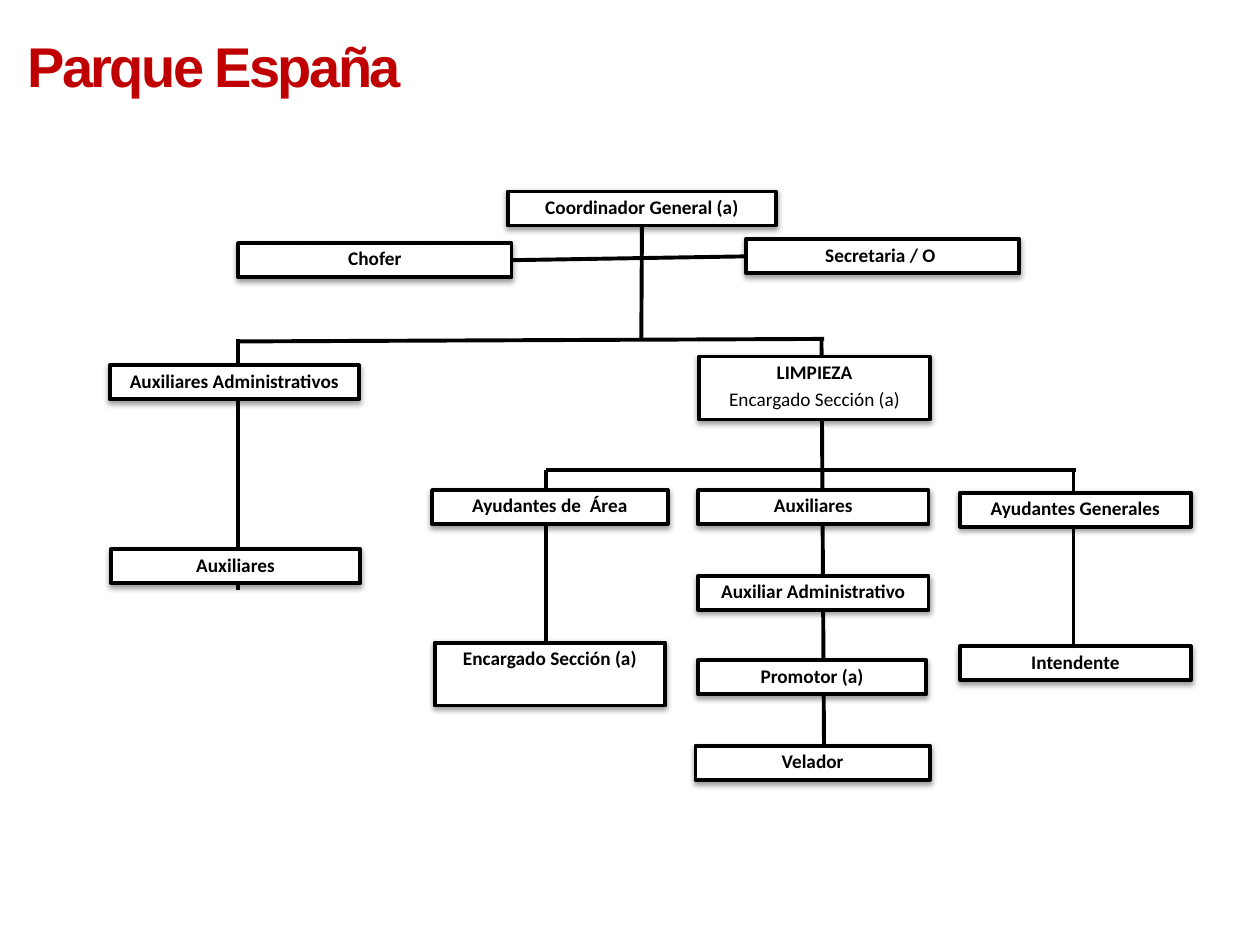
"""Build the organisation chart of Parque España."""
from lxml import etree
from pptx import Presentation
from pptx import util as u
from pptx.dml.color import RGBColor
from pptx.enum import shapes, text
from pptx.oxml import ns

RED = RGBColor(0xC0, 0x00, 0x00)
BLACK = RGBColor(0x00, 0x00, 0x00)
WHITE = RGBColor(0xFF, 0xFF, 0xFF)

LOW, TALL = 0.27, 0.5
TITLE = "Parque España"
BOXES = [
    ("area", 3.43, 3.89, 1.87, LOW, ["Ayudantes de  Área"]),
    ("secretary", 5.92, 1.9, 2.17, LOW, ["Secretaria / O "]),
    ("admin", 5.54, 4.57, 1.83, LOW, ["Auxiliar Administrativo"]),
    ("helpers", 5.54, 3.89, 1.83, LOW, ["Auxiliares"]),
    ("cleaning", 5.55, 2.83, 1.83, TALL, ["LIMPIEZA", "Encargado Sección (a)"]),
    ("steward", 7.62, 5.13, 1.83, LOW, ["Intendente"]),
    ("promoter", 5.54, 5.24, 1.81, LOW, ["Promotor (a)"]),
    ("driver", 1.89, 1.93, 2.17, LOW, ["Chofer"]),
    ("aides", 0.88, 4.36, 1.98, LOW, ["Auxiliares"]),
    ("office", 0.87, 2.9, 1.98, LOW, ["Auxiliares Administrativos"]),
    ("general", 7.62, 3.91, 1.83, LOW, ["Ayudantes Generales"]),
    ("head", 4.03, 1.52, 2.13, LOW, ["Coordinador General (a)"]),
    ("section", 3.45, 5.1, 1.83, TALL, ["Encargado Sección (a)"]),
    ("guard", 5.52, 5.92, 1.86, LOW, ["Velador"]),
]
LINES = [
    (8.52, 5.29, 8.52, 3.72),
    (4.33, 5.4, 4.33, 3.73),
    (6.54, 5.92, 6.52, 2.69),
    (1.89, 2.71, 6.54, 2.69),
    (1.89, 4.68, 1.89, 2.69),
    (4.33, 3.73, 8.54, 3.73),
]


def effects(shape):
    return etree.SubElement(shape._element.spPr, ns.qn("a:effectLst"))


def shade(shape):
    drop = etree.SubElement(effects(shape), ns.qn("a:outerShdw"), blurRad="40000",
                            dist="20000", dir="5400000", rotWithShape="0")
    tone = etree.SubElement(drop, ns.qn("a:srgbClr"), val=str(BLACK))
    etree.SubElement(tone, ns.qn("a:alpha"), val="38000")


def stroke(shape):
    shape.line.color.rgb = BLACK
    shape.line.width = u.Pt(2.25)


def write(para, words, font, size, color, bold):
    run = para.add_run()
    run.text = words
    run.font.name = font
    run.font.size = u.Pt(size)
    run.font.color.rgb = color
    run.font.bold = bold
    return run


def add_line(slide, *ends):
    line = slide.shapes.add_connector(shapes.MSO_CONNECTOR.STRAIGHT, *map(u.Inches, ends))
    stroke(line)
    effects(line)
    return line


def add_box(slide, place, rows):
    box = slide.shapes.add_shape(shapes.MSO_SHAPE.RECTANGLE, *map(u.Inches, place))
    box.fill.solid()
    box.fill.fore_color.rgb = WHITE
    stroke(box)
    shade(box)
    frame = box.text_frame
    frame.word_wrap = True
    frame.vertical_anchor = text.MSO_ANCHOR.TOP
    for i, row in enumerate(rows):
        para = frame.add_paragraph() if i else frame.paragraphs[0]
        para.alignment = text.PP_ALIGN.CENTER
        para.line_spacing = 0.9
        para.space_after = u.Pt(3.85)
        write(para, row, "Calibri", 11, BLACK, i == 0)
    return box


def add_title(slide):
    frame = slide.shapes.add_textbox(*map(u.Inches, (0.12, 0.2, 3.54, 0.64))).text_frame
    frame.word_wrap = True
    frame.auto_size = text.MSO_AUTO_SIZE.SHAPE_TO_FIT_TEXT
    run = write(frame.paragraphs[0], TITLE, "Arial", 32, RED, True)
    run.font._element.set("spc", "-150")


def main():
    deck = Presentation()
    deck.slide_width, deck.slide_height = u.Inches(10), u.Inches(7.5)
    slide = deck.slides.add_slide(deck.slide_layouts[6])
    for ends in LINES:
        add_line(slide, *ends)
    add_title(slide)
    boxes = {name: add_box(slide, place, rows) for name, *place, rows in BOXES}
    trunk = add_line(slide, 5.09, 1.79, 5.09, 2.69)
    trunk.begin_connect(boxes["head"], 2)
    staff = add_line(slide, 4.06, 2.06, 5.92, 2.04)
    staff.begin_connect(boxes["driver"], 3)
    staff.end_connect(boxes["secretary"], 1)
    deck.save("out.pptx")


if __name__ == "__main__":
    main()
